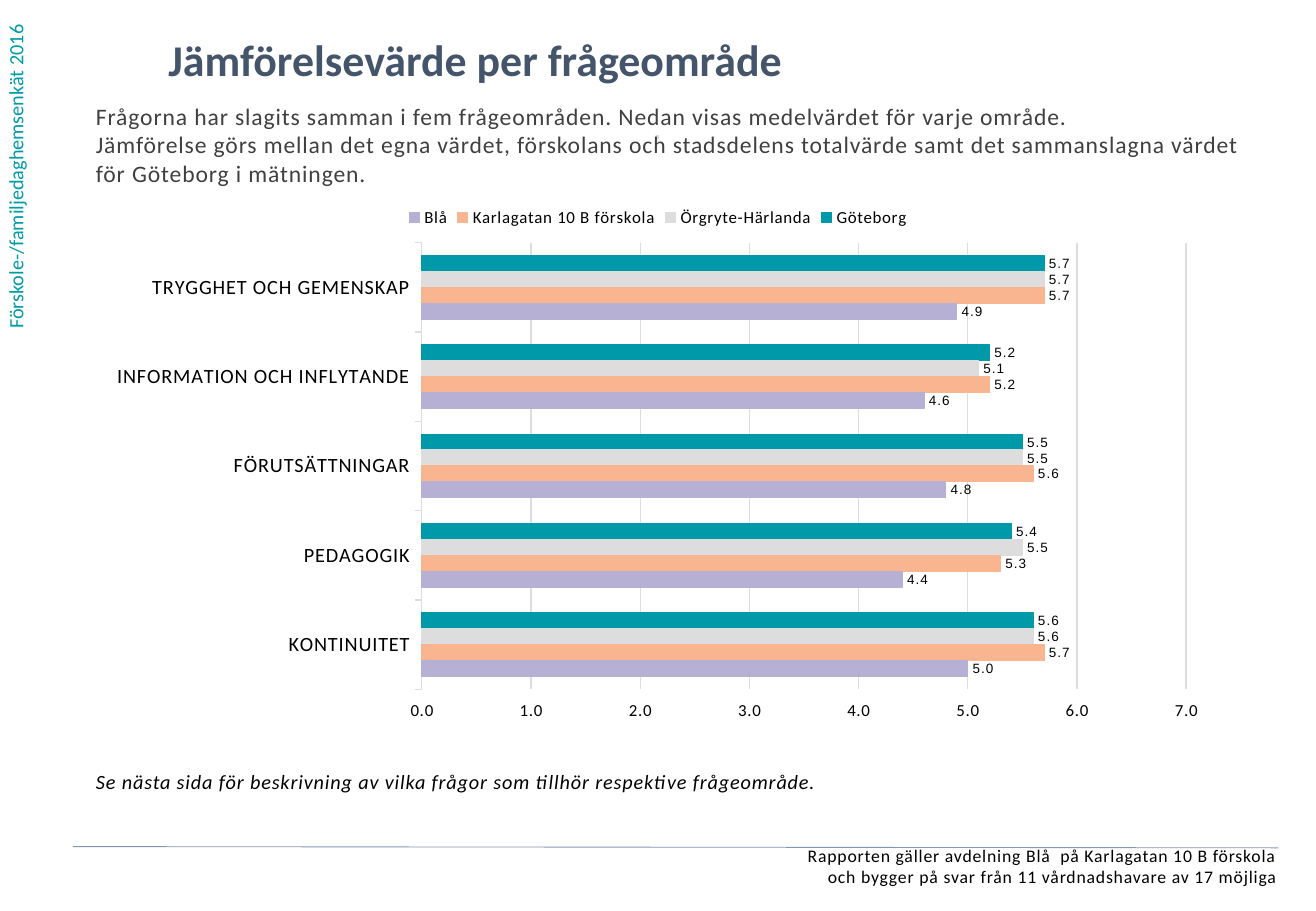
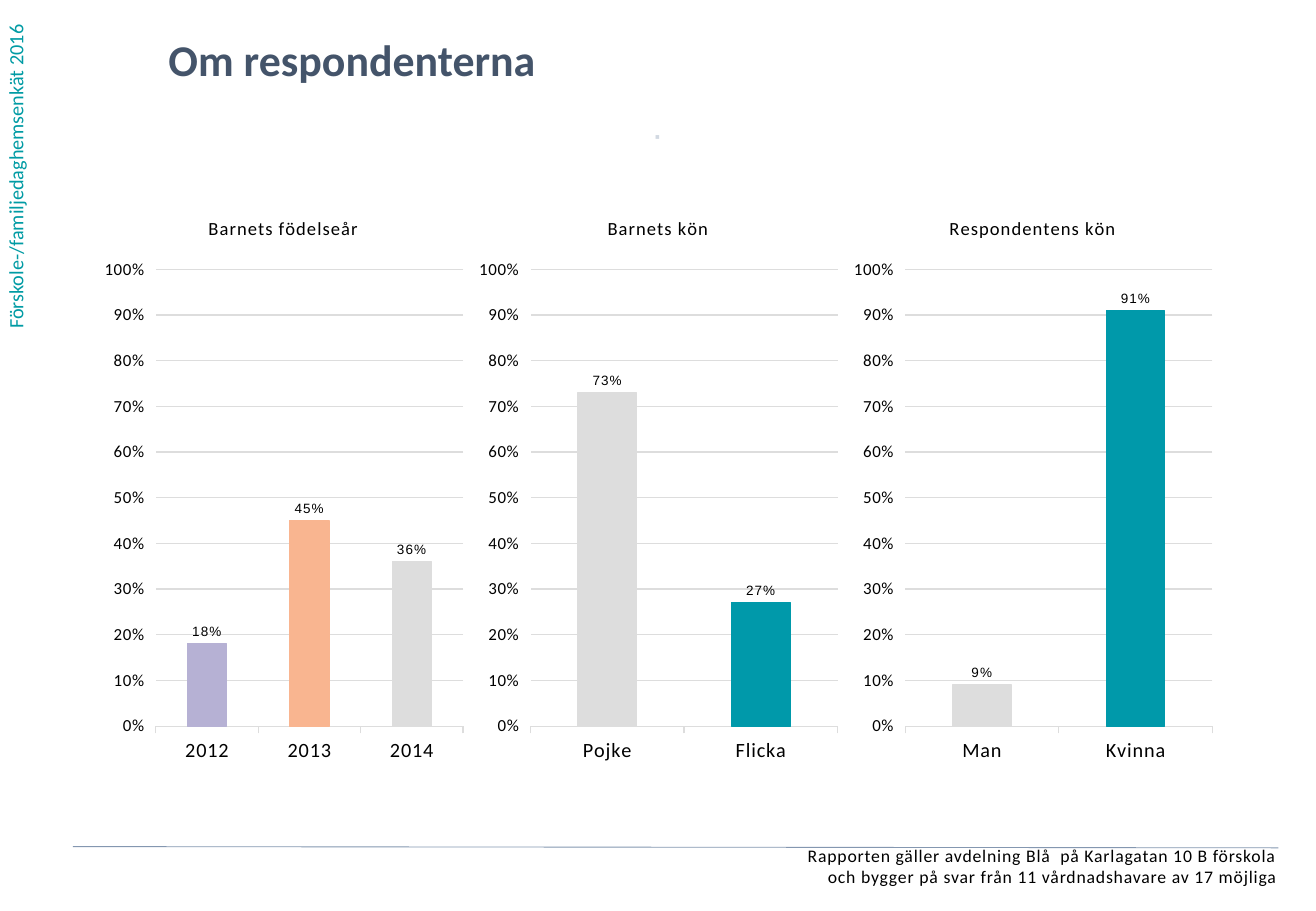
from lxml import etree
from pptx import Presentation
from pptx.chart.data import CategoryChartData
from pptx.dml.color import RGBColor
from pptx.enum.chart import XL_CHART_TYPE, XL_LABEL_POSITION, XL_LEGEND_POSITION
from pptx.enum.chart import XL_TICK_LABEL_POSITION, XL_TICK_MARK
from pptx.enum.shapes import MSO_CONNECTOR
from pptx.enum.text import PP_ALIGN
from pptx.oxml.ns import qn
from pptx.util import Inches, Pt

COLORS = {
    "sidebar": "009BA4", "title": "44546A", "intro": "404040", "black": "000000",
    "dot": "D2D9E2", "rule": "8497B0",
    "teal": "0099AA", "grey": "DDDDDD", "peach": "F9B590", "lilac": "B6B1D4",
}
FONT = "Calibri"
LABEL_FONT = "Arial"
LEFT, RIGHT = PP_ALIGN.LEFT, PP_ALIGN.RIGHT
CENTER = PP_ALIGN.CENTER
BAR, COLUMN = XL_CHART_TYPE.BAR_CLUSTERED, XL_CHART_TYPE.COLUMN_CLUSTERED
OUTSIDE_END = XL_LABEL_POSITION.OUTSIDE_END
TICK_LABELS_HIGH = XL_TICK_LABEL_POSITION.HIGH
TICK_OUT = XL_TICK_MARK.OUTSIDE
LEGEND_TOP = XL_LEGEND_POSITION.TOP
STRAIGHT = MSO_CONNECTOR.STRAIGHT

WIDTH, HEIGHT = Inches(10.83), Inches(7.5)
SPACING = "50"

SIDEBAR = (-0.5, -0.3, 3.69, 37.47)
TITLE = (12.8, 3.6, 77, 7.6)
DOT = (35.73, 13.6, 28.44, 5.2)
INTRO = (7.29, 11.2, 87.35, 13.47)
NOTE = (7.29, 84.42, 85.41, 4)
FOOTER = (1.11, 92.7, 95.95, 5.73)
RULE = (5.54, 92.93, 97.14, 93.07)
AREA_CHART = (7.29, 21.33, 85.41, 59.07)
RESPONDENT_CHARTS = (7.29, 21.33, 85.41, 63.47)

AREAS = ["TRYGGHET OCH GEMENSKAP", "INFORMATION OCH INFLYTANDE", "FÖRUTSÄTTNINGAR",
         "PEDAGOGIK", "KONTINUITET"]
AREA_SERIES = [
    ("Göteborg", "teal", (5.7, 5.2, 5.5, 5.4, 5.6)),
    ("Örgryte-Härlanda", "grey", (5.7, 5.1, 5.5, 5.5, 5.6)),
    ("Karlagatan 10 B förskola", "peach", (5.7, 5.2, 5.6, 5.3, 5.7)),
    ("Blå", "lilac", (4.9, 4.6, 4.8, 4.4, 5.0)),
]
RESPONDENTS = [
    ("Barnets födelseår", [("2014", 0.36, "grey"), ("2013", 0.45, "peach"), ("2012", 0.18, "lilac")]),
    ("Barnets kön", [("Flicka", 0.27, "teal"), ("Pojke", 0.73, "grey")]),
    ("Respondentens kön", [("Kvinna", 0.91, "teal"), ("Man", 0.09, "grey")]),
]
AREA_STYLE = {"format": "0.0;0.0", "maximum": 7, "step": 1, "plot": (0.29, 0.09, 0.68, 0.83)}
RESPONDENT_STYLE = {"format": "0%;0%", "maximum": 1, "step": 0.1, "plot": (0.16, 0.13, 0.82, 0.79)}


def rgb(name):
    return RGBColor.from_string(COLORS[name])


def scaled(box):
    return [int(share * side / 100) for share, side in zip(box, (WIDTH, HEIGHT) * 2)]


def set_font(font, size, color="black", name=FONT, bold=False, italic=False):
    values = {"size": Pt(size), "name": name, "bold": bold, "italic": italic}
    for attribute, value in values.items():
        setattr(font, attribute, value)
    font.color.rgb = rgb(color)


def add_text(slide, box, text, size, color, align=LEFT, spaced=True, inset=0, vertical=False, **style):
    frame = slide.shapes.add_textbox(*scaled(box)).text_frame
    frame.word_wrap = True
    if vertical:
        frame._txBody.bodyPr.set("vert", "vert270")
    for side in ("left", "right", "top", "bottom"):
        setattr(frame, f"margin_{side}", Inches(inset))
    paragraph = frame.paragraphs[0]
    paragraph.text = text
    paragraph.alignment = align
    for run in paragraph.runs:
        set_font(run.font, size, color, **style)
        if spaced:
            run.font._element.set("spc", SPACING)


def add_frame(slide, title):
    add_text(slide, SIDEBAR, "Förskole-/familjedaghemsenkät 2016", 12, "sidebar",
             spaced=False, inset=0.08, vertical=True)
    add_text(slide, TITLE, title, 26, "title", spaced=False, bold=True)
    add_text(slide, FOOTER, "Rapporten gäller avdelning Blå  på Karlagatan 10 B förskola\n"
             "och bygger på svar från 11 vårdnadshavare av 17 möjliga", 10.5, "black", RIGHT)
    add_text(slide, DOT, "⋅", 12, "dot", CENTER, bold=True)
    rule = slide.shapes.add_connector(STRAIGHT, *scaled(RULE))
    rule.line.color.rgb = rgb("rule")
    rule.line.width = Pt(0.5)
    etree.SubElement(rule._element.spPr, qn("a:effectLst"))


def draw_line(line, color):
    line.color.rgb = rgb(color)
    line.width = Pt(0.75)


def paint(target, color):
    target.format.fill.solid()
    target.format.fill.fore_color.rgb = rgb(color)
    draw_line(target.format.line, color)


def set_plot_layout(chart, shares):
    plot_area = chart.element.find(".//" + qn("c:plotArea"))
    layout = plot_area.find(qn("c:layout"))
    if layout is None:
        layout = etree.Element(qn("c:layout"))
        plot_area.insert(0, layout)
    manual = etree.SubElement(layout, qn("c:manualLayout"))
    settings = [("layoutTarget", "inner"), ("xMode", "edge"), ("yMode", "edge")]
    for tag, value in settings + list(zip("xywh", shares)):
        etree.SubElement(manual, qn(f"c:{tag}")).set("val", str(value))


def add_survey_chart(slide, box, kind, categories, series_rows, style, title=None):
    data = CategoryChartData(number_format=style["format"])
    data.categories = categories
    for name, _, values in series_rows:
        data.add_series(name, values)
    chart = slide.shapes.add_chart(kind, *scaled(box), data).chart
    set_font(chart.font, 10)

    chart.has_title = title is not None
    if title:
        chart.chart_title.text_frame.text = title
        chart.chart_title.include_in_layout = False
        set_font(chart.chart_title.text_frame.paragraphs[0].runs[0].font, 11)
    chart.has_legend = title is None
    if chart.has_legend:
        chart.legend.position = LEGEND_TOP
        chart.legend.include_in_layout = False
        set_font(chart.legend.font, 10)

    category_axis, value_axis = chart.category_axis, chart.value_axis
    category_axis.reverse_order = True
    for axis, size in ((category_axis, 12), (value_axis, 10)):
        axis.major_tick_mark = TICK_OUT
        set_font(axis.tick_labels.font, size)
    draw_line(category_axis.format.line, "grey")
    value_axis.format.line.fill.background()
    draw_line(value_axis.major_gridlines.format.line, "grey")
    scale = {"minimum_scale": 0, "maximum_scale": style["maximum"], "major_unit": style["step"],
             "tick_label_position": TICK_LABELS_HIGH}
    for attribute, value in scale.items():
        setattr(value_axis, attribute, value)
    value_axis.tick_labels.number_format = style["format"]
    value_axis.tick_labels.number_format_is_linked = False

    plot = chart.plots[0]
    plot.gap_width = 162
    plot.vary_by_categories = False
    for series, (_, color, _) in zip(plot.series, series_rows):
        paint(series, color)
        labels = series.data_labels
        label_format = {"show_value": True, "position": OUTSIDE_END,
                        "number_format": style["format"], "number_format_is_linked": False}
        for attribute, value in label_format.items():
            setattr(labels, attribute, value)
        set_font(labels.font, 8, name=LABEL_FONT)
    set_plot_layout(chart, style["plot"])
    for tag in ("a:defRPr", "a:rPr"):
        for properties in chart.element.iter(qn(tag)):
            properties.set("spc", SPACING)
    return chart


def build_area_slide(slide):
    add_frame(slide, "Jämförelsevärde per frågeområde")
    add_text(slide, INTRO, "Frågorna har slagits samman i fem frågeområden. "
             "Nedan visas medelvärdet för varje område.\n"
             "Jämförelse görs mellan det egna värdet, förskolans och stadsdelens totalvärde "
             "samt det sammanslagna värdet för Göteborg i mätningen.", 14, "intro")
    add_text(slide, NOTE, "Se nästa sida för beskrivning av vilka frågor som tillhör "
             "respektive frågeområde.", 12, "black", italic=True)
    add_survey_chart(slide, AREA_CHART, BAR, AREAS, AREA_SERIES, AREA_STYLE)


def build_respondent_slide(slide):
    add_frame(slide, "Om respondenterna")
    left, top, width, height = RESPONDENT_CHARTS
    column = width / len(RESPONDENTS)
    for index, (title, answers) in enumerate(RESPONDENTS):
        categories, values, colors = zip(*answers)
        box = (left + index * column, top, column, height)
        chart = add_survey_chart(slide, box, COLUMN, categories, [("Series 1", "teal", values)],
                                 RESPONDENT_STYLE, title)
        for position, color in enumerate(colors):
            paint(chart.plots[0].series[0].points[position], color)


def main():
    deck = Presentation()
    deck.slide_width, deck.slide_height = WIDTH, HEIGHT
    for build in (build_area_slide, build_respondent_slide):
        build(deck.slides.add_slide(deck.slide_layouts[6]))
    deck.save("out.pptx")


if __name__ == "__main__":
    main()
